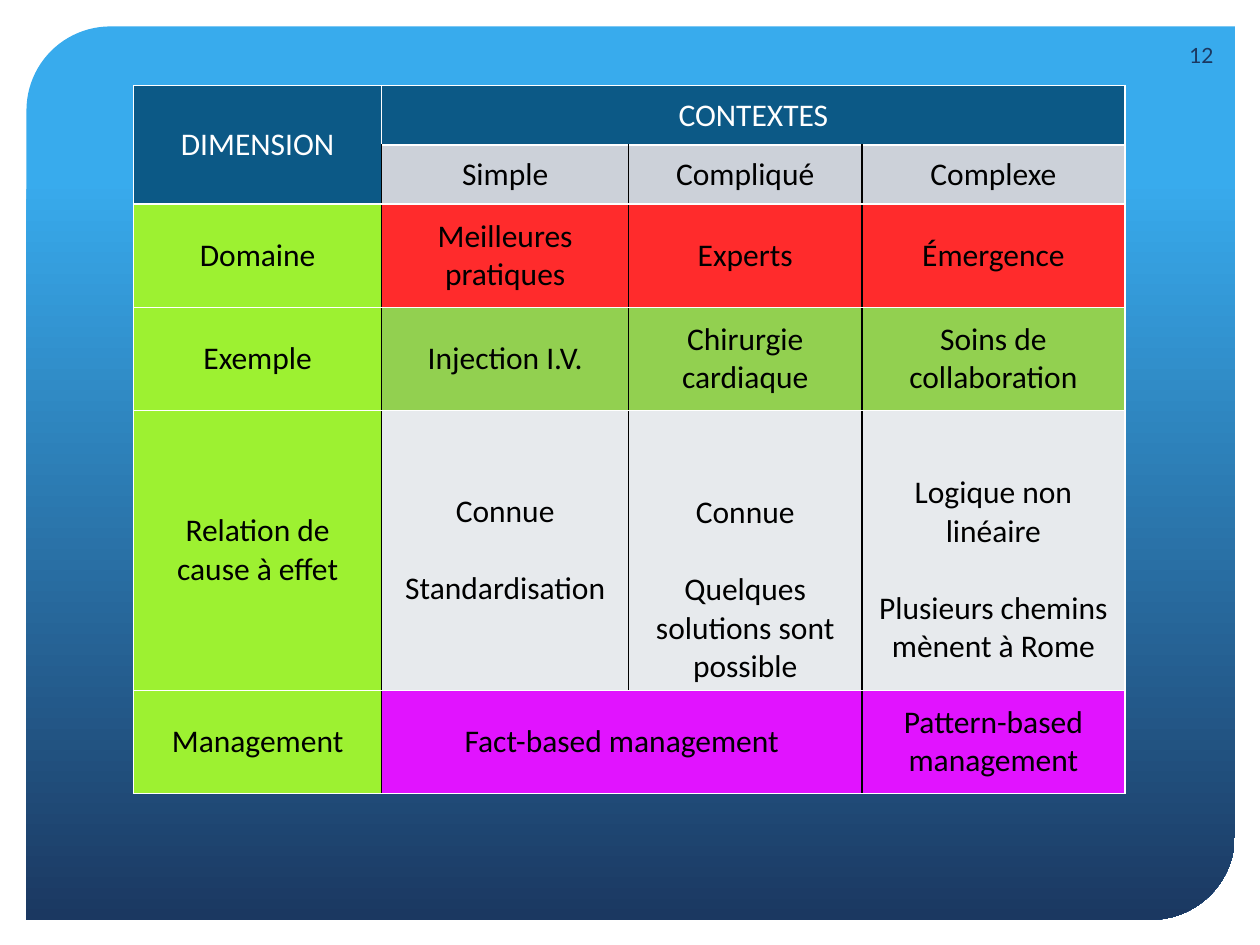
import pptx
import pptx.util
import pptx.dml.color
import pptx.enum.shapes
import pptx.enum.text
import pptx.oxml
import pptx.oxml.ns
from dataclasses import dataclass

Inches, Pt = pptx.util.Inches, pptx.util.Pt
PP_ALIGN = pptx.enum.text.PP_ALIGN
MIDDLE = pptx.enum.text.MSO_ANCHOR.MIDDLE


@dataclass(frozen=True)
class Theme:
    table_font: str = "Calibri"
    number_font: str = "Lato"
    table_size: int = 18
    number_size: int = 12
    sky: str = "38ABED"
    navy: str = "1B3861"
    header: str = "0C5986"
    context: str = "CCD1D9"
    dimension: str = "9DF131"
    domain: str = "FF2B2C"
    example: str = "92D050"
    relation: str = "E7EAED"
    management: str = "E113FF"
    white: str = "FFFFFF"
    black: str = "000000"


def rgb(value):
    return pptx.dml.color.RGBColor.from_string(value)


class SlideBuilder:
    def __init__(self, slide, theme):
        self.slide = slide
        self.theme = theme

    def format_text(self, frame, font, size, color, align):
        frame.word_wrap = True
        for paragraph in frame.paragraphs:
            paragraph.alignment = align
            for run in paragraph.runs:
                run.font.name = font
                run.font.size = Pt(size)
                run.font.color.rgb = rgb(color)

    def backdrop(self, left, top, width, height):
        panel = self.slide.shapes.add_shape(
            pptx.enum.shapes.MSO_SHAPE.ROUND_2_DIAG_RECTANGLE,
            Inches(left), Inches(top), Inches(width), Inches(height))
        panel.adjustments[0], panel.adjustments[1] = 0.094, 0
        panel.shadow.inherit = False
        panel.line.fill.background()
        panel.fill.gradient()
        panel.fill.gradient_angle = 270
        stops = ((0.17, self.theme.sky), (1, self.theme.navy))
        for stop, (position, color) in zip(panel.fill.gradient_stops, stops):
            stop.position = position
            stop.color.rgb = rgb(color)

    def page_number(self, text, left, top, width, height):
        box = self.slide.shapes.add_textbox(
            Inches(left), Inches(top), Inches(width), Inches(height))
        box.text_frame.text = text
        box.text_frame.vertical_anchor = MIDDLE
        self.format_text(box.text_frame, self.theme.number_font,
                         self.theme.number_size, self.theme.navy, PP_ALIGN.RIGHT)

    def table(self, left, top, widths, heights):
        grid = self.slide.shapes.add_table(
            len(heights), len(widths), Inches(left), Inches(top),
            Inches(sum(widths)), Inches(sum(heights))).table
        grid.first_row = grid.horz_banding = False
        for column, width in zip(grid.columns, widths):
            column.width = Inches(width)
        for row, height in zip(grid.rows, heights):
            row.height = Inches(height)
        return grid

    def cell(self, cell, text, fill, color):
        cell.fill.solid()
        cell.fill.fore_color.rgb = rgb(fill)
        cell.vertical_anchor = MIDDLE
        cell.text_frame.text = text
        self.format_text(cell.text_frame, self.theme.table_font,
                         self.theme.table_size, color, PP_ALIGN.CENTER)
        # One line of space between the statements of a cell
        for paragraph in cell.text_frame.paragraphs[1:]:
            paragraph.space_before = Pt(22)

    def borders(self, cell, **colors):
        properties = cell._tc.get_or_add_tcPr()
        for index, (side, color) in enumerate(colors.items()):
            properties.insert(index, pptx.oxml.parse_xml(
                f'<a:ln{side} {pptx.oxml.ns.nsdecls("a")} w="12700"><a:solidFill>'
                f'<a:srgbClr val="{color}"/></a:solidFill></a:ln{side}>'))


def main():
    theme = Theme()
    deck = pptx.Presentation()
    deck.slide_width, deck.slide_height = Inches(10), Inches(7.5)
    builder = SlideBuilder(deck.slides.add_slide(deck.slide_layouts[6]), theme)

    # Background panel and page number
    builder.backdrop(0.21, 0.21, 9.59, 7.09)
    builder.page_number("12", 9.19, 0.24, 0.54, 0.4)

    # Contexts by dimension: row fill, then texts
    rows = [
        (theme.header, ["DIMENSION", "CONTEXTES", "", ""]),
        (theme.context, ["", "Simple", "Compliqué", "Complexe"]),
        (theme.domain, ["Domaine", "Meilleures pratiques", "Experts", "Émergence"]),
        (theme.example, ["Exemple", "Injection I.V.", "Chirurgie cardiaque",
                         "Soins de collaboration"]),
        (theme.relation, ["Relation de cause à effet", "Connue\nStandardisation",
                          "Connue\nQuelques solutions sont possible",
                          "Logique non linéaire\nPlusieurs chemins mènent à Rome"]),
        (theme.management, ["Management", "Fact-based management", "",
                            "Pattern-based management"]),
    ]
    contexts = builder.table(1.06, 0.68, [1.97, 1.96, 1.85, 2.09],
                             [0.47, 0.47, 0.82, 0.82, 2.22, 0.82])
    last = len(contexts.columns) - 1
    for r, (row_fill, texts) in enumerate(rows):
        for c, text in enumerate(texts):
            in_header = r == 0 or (r == 1 and c == 0)
            if in_header:
                fill = theme.header
            else:
                fill = theme.dimension if c == 0 else row_fill
            cell = contexts.cell(r, c)
            builder.cell(cell, text, fill, theme.white if in_header else theme.black)
            # Black inner verticals below the top row, white lines elsewhere
            inner = theme.white if r == 0 else theme.black
            builder.borders(cell,
                            L=theme.white if c == 0 else inner,
                            R=theme.white if c == last else inner,
                            T=theme.white, B=theme.white)

    # Lower the statements in the last two relation cells
    contexts.cell(4, 2).margin_top = Inches(0.66)
    contexts.cell(4, 3).margin_top = Inches(0.36)

    # Merged cells
    for first, end in (((0, 0), (1, 0)), ((0, 1), (0, 3)), ((5, 1), (5, 2))):
        contexts.cell(*first).merge(contexts.cell(*end))

    deck.save("out.pptx")


if __name__ == "__main__":
    main()
